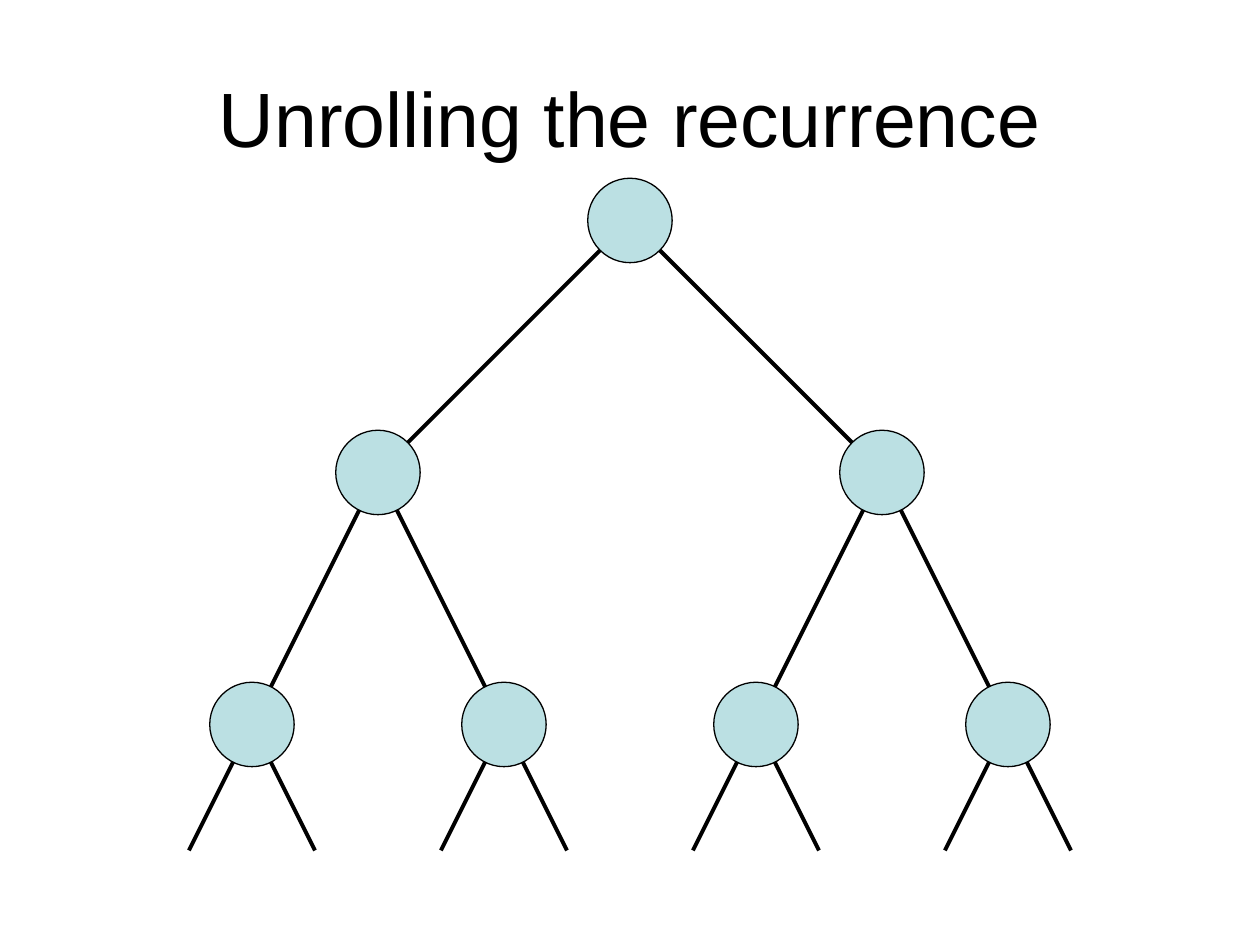
"""Build a slide with a binary recursion tree under a title."""
import pptx
import pptx.dml.color
import pptx.enum.shapes
import pptx.enum.text
import pptx.util
from pptx.util import Inches

BLACK = pptx.dml.color.RGBColor(0x00, 0x00, 0x00)
PALE_TEAL = pptx.dml.color.RGBColor(0xBB, 0xE0, 0xE3)

TITLE = "Unrolling the recurrence"
TITLE_FONT = {"name": "Arial", "size": pptx.util.Pt(44)}
TITLE_FRAME = {"word_wrap": True, "vertical_anchor": pptx.enum.text.MSO_ANCHOR.MIDDLE}
ROOT = (5, 1.75)
CHILDREN = [(3, 3.75), (7, 3.75)]
GRANDCHILDREN = [(2, 5.75), (4, 5.75), (6, 5.75), (8, 5.75)]
NODE_SIZE = 0.67
STUB_WIDTH, STUB_HEIGHT = 0.5, 1
BRANCH_WIDTH, OUTLINE_WIDTH = 2.25, 0.75


def set_values(target, values):
    for name, value in values.items():
        setattr(target, name, value)


def style_line(shape, width):
    shape.line.color.rgb = BLACK
    shape.line.width = pptx.util.Pt(width)


def add_title(slide):
    box = slide.shapes.add_textbox(Inches(0.5), Inches(0.3), Inches(9), Inches(1.25))
    set_values(box.text_frame, TITLE_FRAME)
    paragraph = box.text_frame.paragraphs[0]
    paragraph.alignment = pptx.enum.text.PP_ALIGN.CENTER
    run = paragraph.add_run()
    run.text = TITLE
    set_values(run.font, TITLE_FONT)
    run.font.color.rgb = BLACK


def add_fork(slide, left, top, right):
    points = [(Inches(x), Inches(y)) for x, y in (left, top, right)]
    builder = slide.shapes.build_freeform(*points[0])
    builder.add_line_segments(points[1:], close=False)
    fork = builder.convert_to_shape()
    fork.shadow.inherit = False
    fork.fill.background()
    style_line(fork, BRANCH_WIDTH)


def add_branch(slide, start, end):
    branch = slide.shapes.add_connector(
        pptx.enum.shapes.MSO_CONNECTOR.STRAIGHT, *map(Inches, start + end))
    branch._element.spPr.append(pptx.oxml.xmlchemy.OxmlElement("a:effectLst"))
    style_line(branch, BRANCH_WIDTH)


def add_node(slide, x, y):
    node = slide.shapes.add_shape(
        pptx.enum.shapes.MSO_SHAPE.OVAL, Inches(x - NODE_SIZE / 2),
        Inches(y - NODE_SIZE / 2), Inches(NODE_SIZE), Inches(NODE_SIZE))
    node.shadow.inherit = False
    node.fill.solid()
    node.fill.fore_color.rgb = PALE_TEAL
    style_line(node, OUTLINE_WIDTH)


def main():
    presentation = pptx.Presentation()
    set_values(presentation, {"slide_width": Inches(10), "slide_height": Inches(7.5)})
    slide = presentation.slides.add_slide(presentation.slide_layouts[6])
    add_title(slide)
    for index, grandchild in enumerate(GRANDCHILDREN):
        add_branch(slide, grandchild, CHILDREN[index // 2])
    add_fork(slide, CHILDREN[0], ROOT, CHILDREN[1])
    for x, y in GRANDCHILDREN:
        bottom = y + STUB_HEIGHT
        add_fork(slide, (x - STUB_WIDTH, bottom), (x, y), (x + STUB_WIDTH, bottom))
    for x, y in [ROOT] + CHILDREN + GRANDCHILDREN:
        add_node(slide, x, y)
    presentation.save("out.pptx")


if __name__ == "__main__":
    main()
